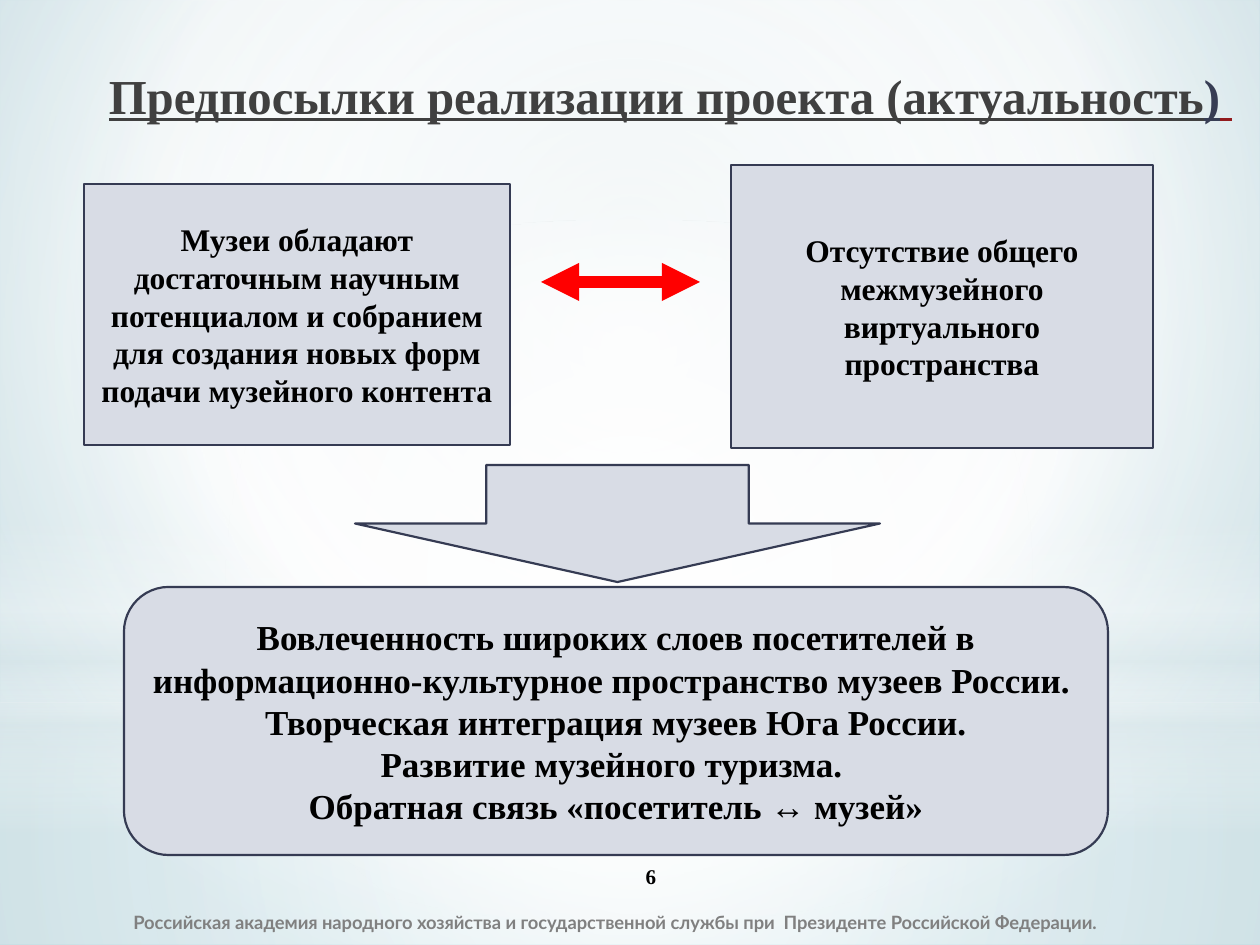
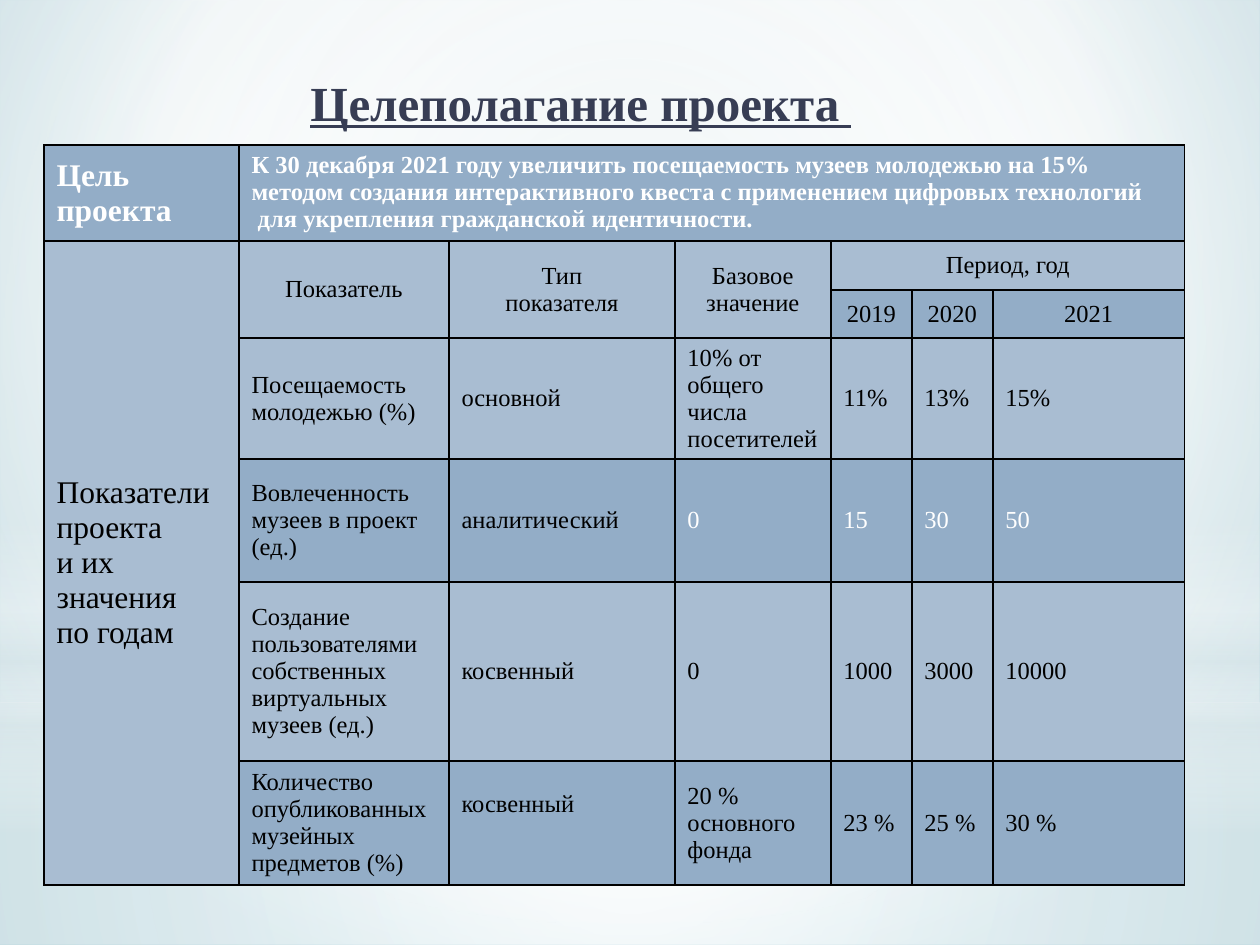
from lxml import etree
from pptx import Presentation
from pptx import util as u
from pptx.dml.color import RGBColor
from pptx.enum import shapes, text
from pptx.oxml import parse_xml
from pptx.oxml.ns import nsdecls, qn

PX = u.Inches(1) / 126
SERIF, SANS = "Times New Roman", "Lato"
BLACK = RGBColor(0x00, 0x00, 0x00)
WHITE = RGBColor(0xFF, 0xFF, 0xFF)
RED = RGBColor(0xFF, 0x00, 0x00)
DARK_RED = RGBColor(0x92, 0x1A, 0x1D)
CHARCOAL = RGBColor(0x40, 0x40, 0x40)
NAVY = RGBColor(0x37, 0x3D, 0x54)
OUTLINE = RGBColor(0x35, 0x3B, 0x53)
PANEL = RGBColor(0xD8, 0xDC, 0xE5)
GREY = RGBColor(0x80, 0x80, 0x80)
CELL = RGBColor(0x93, 0xAD, 0xC7)
CELL_LIGHT = RGBColor(0xA9, 0xBD, 0xD2)
CENTER, LEFT, RIGHT = text.PP_ALIGN.CENTER, text.PP_ALIGN.LEFT, text.PP_ALIGN.RIGHT
MIDDLE, TOP = text.MSO_ANCHOR.MIDDLE, text.MSO_ANCHOR.TOP


def set_gradient(parent, stops, focus=None):
    """Swap the solid fill of parent for a gradient: circular round focus, else downward."""
    gs = "".join(f'<a:gs pos="{pos * 1000}"><a:srgbClr val="{color}">'
                 f'<a:alpha val="{alpha * 1000}"/></a:srgbClr></a:gs>'
                 for pos, color, alpha in stops)
    if focus:
        sides = " ".join(f'{side}="{v * 1000}"' for side, v in zip("ltrb", focus))
        shade = f'<a:path path="circle"><a:fillToRect {sides}/></a:path>'
    else:
        shade = '<a:lin ang="5400000" scaled="0"/>'
    grad = parse_xml(f'<a:gradFill {nsdecls("a")} rotWithShape="1">'
                     f'<a:gsLst>{gs}</a:gsLst>{shade}</a:gradFill>')
    parent.replace(parent.find(qn("a:solidFill")), grad)


def write(tf, paragraphs, size, align=CENTER, anchor=MIDDLE, font=SERIF, bold=True,
          underline=None):
    """Fill a text frame; each paragraph is a list of (words, colour) runs."""
    tf.word_wrap = True
    tf.vertical_anchor = anchor
    for i, runs in enumerate(paragraphs):
        p = tf.add_paragraph() if i else tf.paragraphs[0]
        p.alignment = align
        for words, color in runs:
            r = p.add_run()
            r.text = words
            r.font.name, r.font.size, r.font.bold = font, u.Pt(size), bold
            r.font.underline = underline
            r.font.color.rgb = color


prs = Presentation()
prs.slide_width, prs.slide_height = u.Inches(10), u.Inches(7.5)
title_only = prs.slide_layouts[5]
reasons = prs.slides.add_slide(title_only)
goals = prs.slides.add_slide(title_only)

# Shared background on the master
master = prs.slide_master
master.background.fill.solid()
set_gradient(master.element.find(".//" + qn("p:bgPr")),
             [(0, "D0E2E6", 100), (60, "FFFFFF", 100), (100, "9BC8D4", 100)],
             (20, 10, 20, 60))
RECT, OVAL = shapes.MSO_SHAPE.RECTANGLE, shapes.MSO_SHAPE.OVAL
CENTRE = (50, 50, 50, 50)
glows = [
    (RECT, 703, 242, CENTRE, [(0, "FFFFFF", 91), (37, "FFFFFF", 76), (100, "DDE9EC", 79)]),
    (RECT, 0, 703, CENTRE, [(0, "FFFFFF", 89), (48, "FFFFFF", 62), (100, "DDE9EC", 79)]),
    (RECT, 519, 315, None, [(0, "FFFFFF", 0), (29, "FFFFFF", 30), (45, "DDE9EC", 40),
                            (55, "FFFFFF", 26), (65, "DDE9EC", 60), (100, "FFFFFF", 0)]),
    (OVAL, 220, 703, CENTRE, [(0, "FFFFFF", 100), (56, "FFFFFF", 0)]),
]
for i, (kind, y, h, focus, stops) in enumerate(glows):
    sp = reasons.shapes.add_shape(kind, 0, int(y * PX), prs.slide_width, int(h * PX))
    sp.shadow.inherit = False
    sp.line.fill.background()
    sp.fill.solid()
    set_gradient(sp.element.spPr, stops, focus)
    master.shapes._spTree.insert(2 + i, sp.element)

# Titles
titles = [
    (reasons, (25, 59, 1220, 100), 27.9, RIGHT, TOP,
     [("Предпосылки реализации проекта (актуальность", CHARCOAL), (")", NAVY),
      (" ", DARK_RED)]),
    (goals, (138, 42, 886, 127), 28, CENTER, MIDDLE, [("Целеполагание проекта ", NAVY)]),
]
for slide, box, size, align, anchor, runs in titles:
    title = slide.shapes.title
    title.left, title.top, title.width, title.height = (int(v * PX) for v in box)
    write(title.text_frame, [runs], size, align, anchor, underline=True)
    title.text_frame.auto_size = text.MSO_AUTO_SIZE.NONE
goals.shapes.title.text_frame.paragraphs[0].line_spacing = 0.9

# Slide 1: footer and page number
notes = [
    ((121, 897, 1080, 50), LEFT, SANS, 10.5, GREY,
     "Российская академия народного хозяйства и государственной службы при  "
     "Президенте Российской Федерации."),
    ((525, 851, 252, 50), CENTER, SERIF, 12, BLACK, "6"),
]
for box, align, font, size, color, words in notes:
    tb = reasons.shapes.add_textbox(*(int(v * PX) for v in box))
    write(tb.text_frame, [[(words, color)]], size, align, font=font)

# Slide 1: two premises lead to the result
panels = [
    (RECT, (84, 184, 426, 261), 18,
     ["Музеи обладают достаточным научным потенциалом и собранием для создания "
      "новых форм подачи музейного контента"]),
    (RECT, (731, 165, 422, 283), 18,
     ["Отсутствие общего межмузейного виртуального пространства"]),
    (shapes.MSO_SHAPE.ROUNDED_RECTANGLE, (124, 587, 984, 268), 20,
     ["Вовлеченность широких слоев посетителей в информационно-культурное "
      "пространство музеев России. ",
      "Творческая интеграция музеев Юга России.",
      "Развитие музейного туризма. ",
      "Обратная связь «посетитель ↔ музей»"]),
    (shapes.MSO_SHAPE.DOWN_ARROW, (355, 465, 525, 117), 18, []),
]
for kind, box, size, lines in panels:
    sp = reasons.shapes.add_shape(kind, *(int(v * PX) for v in box))
    sp.shadow.inherit = False
    sp.fill.solid()
    sp.fill.fore_color.rgb = PANEL
    sp.line.color.rgb = OUTLINE
    sp.line.width = u.Pt(1.25)
    write(sp.text_frame, [[(line, BLACK)] for line in lines], size)

link = reasons.shapes.add_connector(shapes.MSO_CONNECTOR.STRAIGHT,
                                    *(int(v * PX) for v in (541, 282, 700, 282)))
link.line.color.rgb = RED
link.line.width = u.Pt(7.25)
for end in ("headEnd", "tailEnd"):
    etree.SubElement(link.line._get_or_add_ln(), qn("a:" + end), type="triangle")
etree.SubElement(link.element.spPr, qn("a:effectLst"))

# Slide 2: table of indicators
col_widths = [195, 210, 226, 156, 81, 81, 192]
row_heights = [96, 49, 48, 121, 123, 179, 124]
rows = [
    ["Цель проекта",
     "К 30 декабря 2021 году увеличить посещаемость музеев молодежью на 15% методом "
     "создания интерактивного квеста с применением цифровых технологий\n"
     " для укрепления гражданской идентичности."],
    ["Показатели\nпроекта\nи их значения\nпо годам", "Показатель", "Тип\nпоказателя",
     "Базовое\nзначение", "Период, год"],
    ["", "", "", "", "2019", "2020", "2021"],
    ["", "Посещаемость молодежью (%)", "основной", "10% от общего числа посетителей",
     "11%", "13%", "15%"],
    ["", "Вовлеченность музеев в проект (ед.)", "аналитический", "0", "15", "30", "50"],
    ["", "Создание пользователями собственных виртуальных музеев (ед.)", "косвенный",
     "0", "1000", "3000", "10000"],
    ["", "Количество опубликованных музейных предметов (%)", "косвенный",
     "20 % основного фонда", "23 %", "25 %", "30 %"],
]
frame = goals.shapes.add_table(len(rows), len(col_widths), int(44 * PX), int(145 * PX),
                               int(sum(col_widths) * PX), int(sum(row_heights) * PX))
table = frame.table
for col, w in zip(table.columns, col_widths):
    col.width = int(w * PX)
for row, h in zip(table.rows, row_heights):
    row.height = int(h * PX)
spans = [((0, 1), (0, 6)), ((1, 0), (6, 0)), ((1, 4), (1, 6))]
spans += [((1, c), (2, c)) for c in (1, 2, 3)]
for start, end in spans:
    table.cell(*start).merge(table.cell(*end))

for r in range(len(rows)):
    for c in range(len(col_widths)):
        cell = table.cell(r, c)
        cell.fill.solid()
        cell.fill.fore_color.rgb = CELL_LIGHT if r % 2 or (r and c == 0) else CELL
        for i, side in enumerate(("lnL", "lnR", "lnT", "lnB")):
            cell._tc.tcPr.insert(i, parse_xml(
                f'<a:{side} {nsdecls("a")} w="12700"><a:solidFill>'
                f'<a:srgbClr val="{BLACK}"/></a:solidFill></a:{side}>'))
        if c < len(rows[r]) and rows[r][c]:
            color = WHITE if r == 0 or (r == 4 and c > 2) else BLACK
            write(cell.text_frame, [[(line, color)] for line in rows[r][c].split("\n")],
                  18 if c == 0 else 14, CENTER if r in (1, 2) and c else LEFT,
                  bold=r == 0)
            cell.vertical_anchor = TOP if (r, c) == (0, 1) else MIDDLE
table.cell(3, 3).margin_right = int(4 * PX)
table.cell(6, 2).margin_bottom = int(44 * PX)

prs.save("out.pptx")
